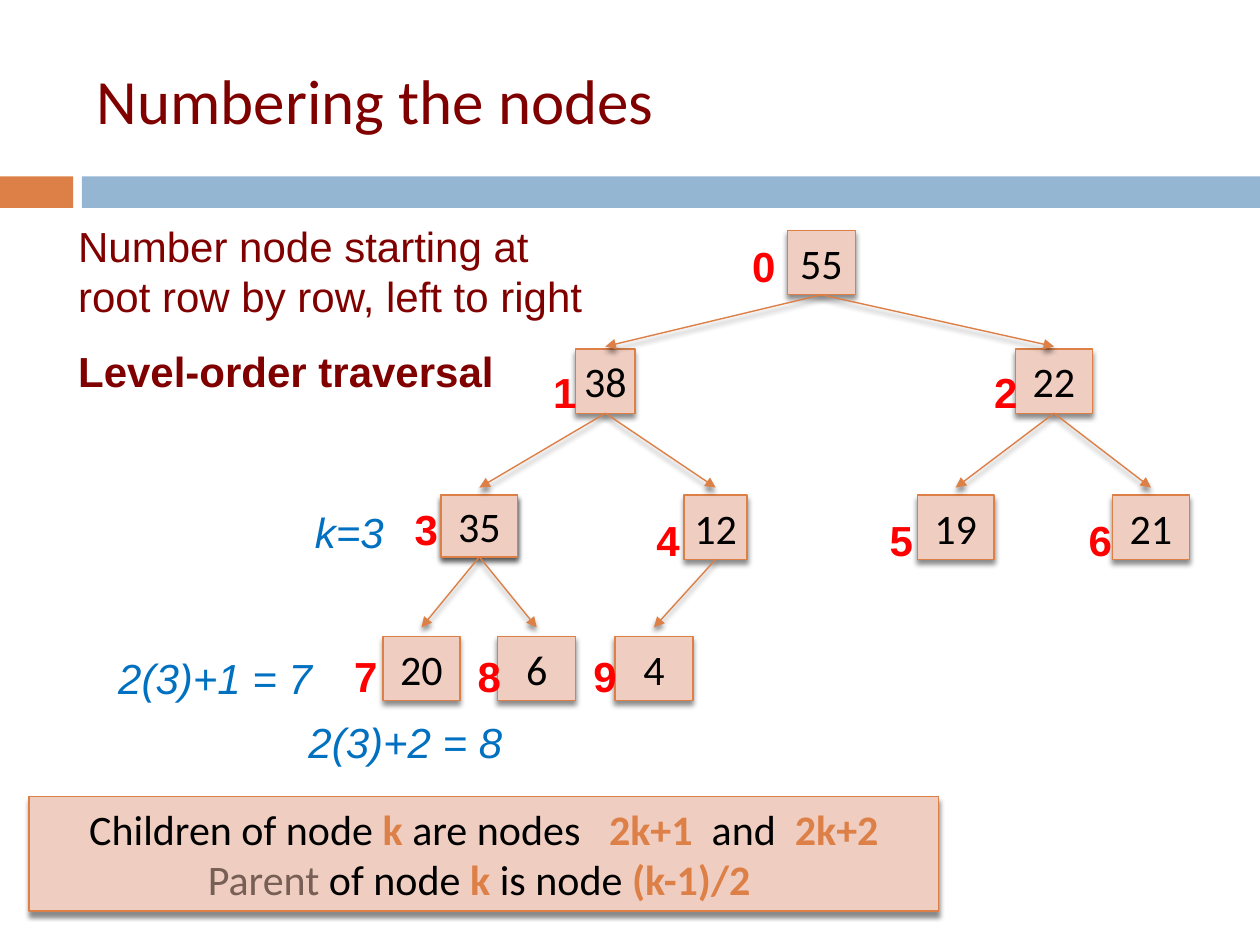
from lxml import etree
from pptx import Presentation
from pptx import util as u
from pptx.dml.color import RGBColor
from pptx.enum import shapes, text
from pptx.oxml import parse_xml
from pptx.oxml.ns import nsdecls, qn

COLUMNS, ROWS = 100, 75
WIDTH, HEIGHT = u.Inches(10), u.Inches(7.5)
COLORS = {
    "orange": "DD8047", "blue": "94B6D2", "peach": "EFCDC1", "maroon": "800000",
    "red": "FF0000", "formula": "0070C0", "brown": "775F55", "black": "000000",
}
SNUG = {"margin_left": u.Inches(0.04), "margin_top": 0,
        "margin_right": u.Inches(0.04), "margin_bottom": 0}
WRAPPED = {"word_wrap": True}
UNWRAPPED = {"word_wrap": False}
MIDDLE = {"vertical_anchor": text.MSO_ANCHOR.MIDDLE}
CENTERED = {"alignment": text.PP_ALIGN.CENTER}
CALIBRI = {"name": "Calibri", "size": u.Pt(24)}
ARIAL = {"name": "Arial", "size": u.Pt(24)}
BOLD = {"bold": True}

TREE_LEVELS = [
    (18.3, 0, [(62.5, 5.4, "55")]),
    (27.7, 27.5, [(45.7, 4.7, "38"), (80.6, 6.1, "22")]),
    (39.3, 38.7, [(35, 6.1, "35"), (54.3, 5, "12"), (72.8, 6.1, "19"), (88.3, 6.1, "21")]),
    (50.5, 49.8, [(30.4, 6.1, "20"), (39.5, 6.2, "6"), (48.8, 6.2, "4")]),
]
NUMBER_SPOTS = [
    (59.3, 19.1), (43.5, 29.1), (78.5, 29.1), (32.5, 40), (51.7, 40.8),
    (70.2, 40.8), (86, 40.8), (27.7, 51.6), (37.5, 51.6), (46.7, 51.6),
]
FORMULAS = [
    ("k=3", (24, 39.7, 7.7, 5)),
    ("2(3)+1 = 7", (8.4, 51.3, 17.6, 5)),
    ("2(3)+2 = 8", (23.5, 56.4, 17.6, 5)),
]


def x(columns):
    return round(WIDTH * columns / COLUMNS)


def y(rows):
    return round(HEIGHT * rows / ROWS)


def place(area):
    left, top, width, height = area
    return x(left), y(top), x(width), y(height)


def apply(target, formats):
    for name, value in formats.items():
        setattr(target, name, value)


def color(name):
    return RGBColor.from_string(COLORS[name])


def add_shadow(element):
    properties = element.spPr
    for effects in properties.findall(qn("a:effectLst")):
        properties.remove(effects)
    properties.append(parse_xml(
        f'<a:effectLst {nsdecls("a")}><a:outerShdw blurRad="{u.Pt(3)}" dist="{u.Pt(2.4)}" '
        f'dir="5400000" rotWithShape="0"><a:srgbClr val="{COLORS["black"]}">'
        '<a:alpha val="45000"/></a:srgbClr></a:outerShdw></a:effectLst>'))


def write(frame, paragraphs, font, frame_format, paragraph_format=None):
    apply(frame, frame_format)
    for index, runs in enumerate(paragraphs):
        paragraph = frame.add_paragraph() if index else frame.paragraphs[0]
        apply(paragraph, paragraph_format or {})
        for words, shade, extra in runs:
            run = paragraph.add_run()
            run.text = words
            apply(run.font, font | extra)
            run.font.color.rgb = color(shade)


def add_words(slide, area, *content):
    words = slide.shapes.add_textbox(*place(area))
    write(words.text_frame, *content)


def add_band(slide, area, shade):
    band = slide.shapes.add_shape(shapes.MSO_SHAPE.RECTANGLE, *place(area))
    band.shadow.inherit = False
    band.fill.solid()
    band.fill.fore_color.rgb = color(shade)
    band.line.fill.background()
    return band


def add_panel(slide, area):
    panel = add_band(slide, area, "peach")
    panel.line.color.rgb = color("orange")
    panel.line.width = u.Pt(0.79)
    add_shadow(panel._element)
    return panel


def add_node(slide, left, top, width, key):
    height = 5.1
    if key == "35":
        height = 4.9
        add_panel(slide, (left, top, width, 4.7))
    node = add_panel(slide, (left, top, width, height))
    write(node.text_frame, [[(key, "black", {})]], CALIBRI,
          SNUG | WRAPPED | MIDDLE, CENTERED)
    return node


def add_branch(slide, parent, child, tip):
    branch = slide.shapes.add_connector(
        shapes.MSO_CONNECTOR.STRAIGHT, parent.left + parent.width // 2,
        parent.top + parent.height, child.left + child.width // 2, y(tip))
    branch.begin_connect(parent, 2)
    branch.line.color.rgb = color("orange")
    branch.line.width = u.Pt(0.79)
    etree.SubElement(branch.line._get_or_add_ln(), qn("a:tailEnd"), type="triangle")
    add_shadow(branch._element)


def add_tree(slide):
    nodes, tips = [], []
    for top, tip, level in TREE_LEVELS:
        for left, width, key in level:
            nodes.append(add_node(slide, left, top, width, key))
            tips.append(tip)
    for number in range(1, len(nodes)):
        add_branch(slide, nodes[(number - 1) // 2], nodes[number], tips[number])


def add_numbers(slide):
    for number, (left, top) in enumerate(NUMBER_SPOTS):
        add_words(slide, (left, top, 2.3, 4), [[(str(number), "red", BOLD)]],
                  ARIAL, SNUG | UNWRAPPED)


def add_rule(slide):
    rule = add_panel(slide, (2.3, 63.2, 72.2, 9.1))
    children = [("Children of node ", "black", {}), ("k ", "orange", BOLD),
                ("are nodes   ", "black", {}), ("2k+1", "orange", BOLD),
                ("  and  ", "black", {}), ("2k+2", "orange", BOLD)]
    parent = [("Parent", "brown", {}), (" of node ", "black", {}),
              ("k ", "orange", BOLD), ("is node ", "black", {}),
              ("(k-1)/2 ", "orange", BOLD)]
    write(rule.text_frame, [children, parent], CALIBRI, UNWRAPPED | MIDDLE, CENTERED)


def main():
    deck = Presentation()
    deck.slide_width, deck.slide_height = WIDTH, HEIGHT
    slide = deck.slides.add_slide(deck.slide_layouts[6])

    add_band(slide, (0, 14, 5.8, 2.5), "orange")
    add_band(slide, (6.5, 14, 93.5, 2.5), "blue")
    add_words(slide, (6.7, 2.5, 89.2, 10.8), [[("Numbering the nodes", "maroon", {})]],
              CALIBRI | {"size": u.Pt(36)}, WRAPPED | MIDDLE)
    add_tree(slide)
    add_words(slide, (5.8, 17.5, 41.9, 19.2),
              [[("Number node starting at root row by row, left to right", "maroon", {})],
               [("Level-order traversal", "maroon", BOLD)]],
              ARIAL, SNUG | WRAPPED, {"space_before": u.Pt(14)})
    add_numbers(slide)
    add_rule(slide)
    for formula, area in FORMULAS:
        add_words(slide, area, [[(formula, "formula", {"italic": True})]], ARIAL, UNWRAPPED)

    deck.save("out.pptx")


if __name__ == "__main__":
    main()
